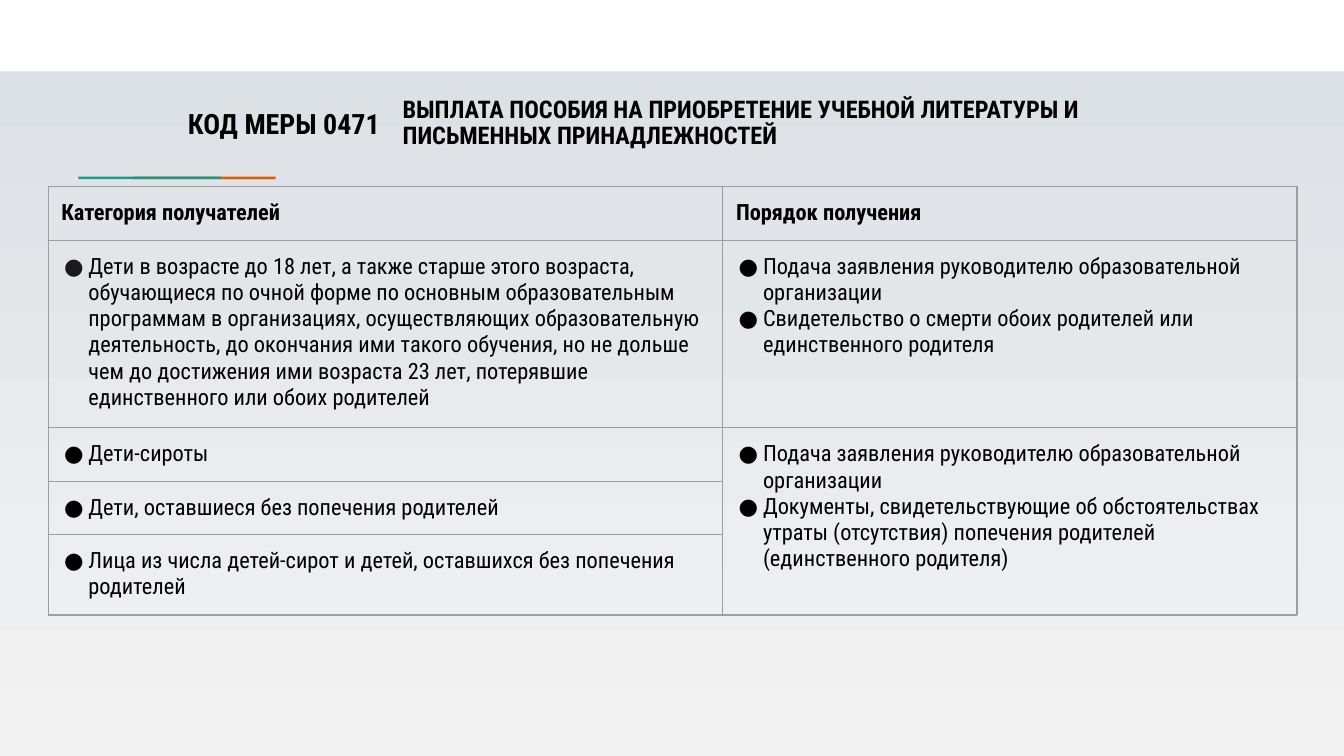
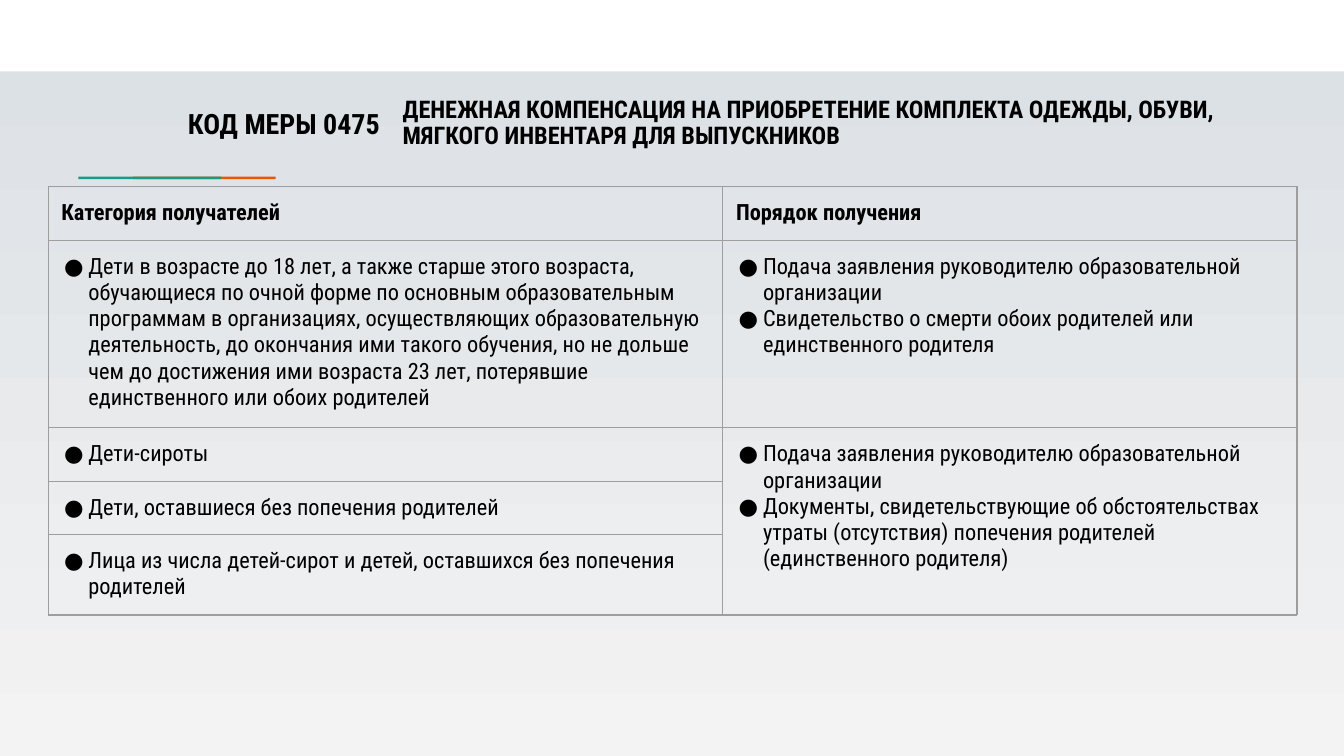
from lxml.etree import SubElement
from pptx import Presentation
from pptx.dml.color import RGBColor
from pptx.enum.shapes import MSO_SHAPE as Shape
from pptx.enum.text import MSO_ANCHOR as Anchor, PP_ALIGN as Align
from pptx.oxml import parse_xml
from pptx.oxml.ns import nsdecls, qn
from pptx.util import Cm, Pt

FONT = "Roboto Condensed"
BLACK = RGBColor(0x00, 0x00, 0x00)
CHARCOAL = RGBColor(0x1A, 0x1A, 0x1A)
WHITE = RGBColor(0xFF, 0xFF, 0xFF)
ORANGE = RGBColor(0xEB, 0x56, 0x00)
TEAL = RGBColor(0x1A, 0x99, 0x88)
GRID = RGBColor(0x9E, 0x9E, 0x9E)
SKY = (RGBColor(0xDA, 0xDF, 0xE4), RGBColor(0xF3, 0xF3, 0xF3))

MEASURES = [
    ("КОД МЕРЫ 0471",
     "ВЫПЛАТА ПОСОБИЯ НА ПРИОБРЕТЕНИЕ УЧЕБНОЙ ЛИТЕРАТУРЫ И ПИСЬМЕННЫХ ПРИНАДЛЕЖНОСТЕЙ",
     CHARCOAL),
    ("КОД МЕРЫ 0475",
     "ДЕНЕЖНАЯ КОМПЕНСАЦИЯ НА ПРИОБРЕТЕНИЕ КОМПЛЕКТА ОДЕЖДЫ, ОБУВИ, МЯГКОГО ИНВЕНТАРЯ ДЛЯ ВЫПУСКНИКОВ",
     BLACK),
]
HEADINGS = ("Категория получателей", "Порядок получения")
RECIPIENTS = [
    "Дети в возрасте до 18 лет, а также старше этого возраста, обучающиеся по очной форме "
    "по основным образовательным программам в организациях, осуществляющих образовательную "
    "деятельность, до окончания ими такого обучения, но не дольше чем до достижения ими "
    "возраста 23 лет, потерявшие единственного или обоих родителей",
    "Дети-сироты",
    "Дети, оставшиеся без попечения родителей",
    "Лица из числа детей-сирот и детей, оставшихся без попечения родителей",
]
APPLICATION = "Подача заявления руководителю образовательной организации"
PROCEDURES = {
    1: (APPLICATION, "Свидетельство о смерти обоих родителей или единственного родителя"),
    2: (APPLICATION, "Документы, свидетельствующие об обстоятельствах утраты (отсутствия) "
                     "попечения родителей (единственного родителя)"),
}

PAGE_WIDTH, PAGE_HEIGHT = 25.4, 14.29
BAND_HEIGHT, HEADER_HEIGHT = 1.35, 1.96
CODE_LEFT, CODE_WIDTH, TITLE_WIDTH = 2.08, 5.35, 16.0
ACCENT_LEFT, ACCENT_TOP, ACCENT_WIDTH, ACCENT_HEIGHT, ACCENT_STEP = 1.48, 3.34, 2.7, 0.05, 1.03
TABLE_LEFT, TABLE_TOP = 0.91, 3.53
COLUMNS = (12.75, 10.85)
ROWS = (1.0, 3.49, 1.0, 1.0, 1.49)
PADDING = 0.25


def write(paragraph, text, size, bold=False):
    run = paragraph.add_run()
    run.text = text
    run.font.name, run.font.size, run.font.bold = FONT, Pt(size), bold
    run.font.color.rgb = BLACK


def pad(part, across, down):
    part.margin_left = part.margin_right = Cm(across)
    part.margin_top = part.margin_bottom = Cm(down)


def add_bar(slide, left, top, width, height, color):
    bar = slide.shapes.add_shape(Shape.RECTANGLE, Cm(left), Cm(top), Cm(width), Cm(height))
    bar.shadow.inherit = False
    bar.fill.solid()
    bar.fill.fore_color.rgb = color
    bar.line.fill.background()


def add_header(slide, code, title):
    add_bar(slide, 0, 0, PAGE_WIDTH, BAND_HEIGHT, WHITE)
    add_bar(slide, ACCENT_LEFT + ACCENT_STEP, ACCENT_TOP, ACCENT_WIDTH, ACCENT_HEIGHT, ORANGE)
    add_bar(slide, ACCENT_LEFT, ACCENT_TOP, ACCENT_WIDTH, ACCENT_HEIGHT, TEAL)

    heading = slide.shapes.title
    heading.left, heading.top = Cm(CODE_LEFT + CODE_WIDTH), Cm(BAND_HEIGHT)
    heading.width, heading.height = Cm(TITLE_WIDTH), Cm(HEADER_HEIGHT)
    label = slide.shapes.add_textbox(Cm(CODE_LEFT), Cm(BAND_HEIGHT), Cm(CODE_WIDTH), Cm(HEADER_HEIGHT))
    pad(heading.text_frame, 0.18, 0.1)
    pad(label.text_frame, PADDING, PADDING)
    for part, text, size, align in ((heading, title, 13, Align.LEFT), (label, code, 15, Align.RIGHT)):
        frame = part.text_frame
        frame.word_wrap = True
        frame.vertical_anchor = Anchor.MIDDLE
        frame.paragraphs[0].alignment = align
        write(frame.paragraphs[0], text, size, True)
    heading.text_frame.paragraphs[0].line_spacing = 0.9


def style_cell(cell):
    pad(cell, PADDING, PADDING)
    cell.fill.background()
    properties = cell._tc.get_or_add_tcPr()
    for position, side in enumerate("LRTB"):
        properties.insert(position, parse_xml(
            f'<a:ln{side} {nsdecls("a")} w="{Pt(0.75)}"><a:solidFill>'
            f'<a:srgbClr val="{GRID}"/></a:solidFill></a:ln{side}>'))


def write_bullets(cell, items, color=BLACK):
    frame = cell.text_frame
    for index, item in enumerate(items):
        paragraph = frame.add_paragraph() if index else frame.paragraphs[0]
        properties = paragraph._p.get_or_add_pPr()
        properties.set("marL", str(Cm(0.51)))
        properties.set("indent", str(Cm(-0.46)))
        SubElement(SubElement(properties, qn("a:buClr")), qn("a:srgbClr"), val=str(color))
        SubElement(properties, qn("a:buFont"), typeface=FONT)
        SubElement(properties, qn("a:buChar"), char="●")
        write(paragraph, item, 12)


def add_recipients_table(slide, first_bullet):
    table = slide.shapes.add_table(len(ROWS), len(COLUMNS), Cm(TABLE_LEFT), Cm(TABLE_TOP),
                                   Cm(sum(COLUMNS)), Cm(sum(ROWS))).table
    table.horz_banding = False
    for column, width in zip(table.columns, COLUMNS):
        column.width = Cm(width)
    for row, height in zip(table.rows, ROWS):
        row.height = Cm(height)
    for cell in table.iter_cells():
        style_cell(cell)
    table.cell(2, 1).merge(table.cell(len(ROWS) - 1, 1))

    for column, heading in enumerate(HEADINGS):
        write(table.cell(0, column).text_frame.paragraphs[0], heading, 12, True)
    for row, recipient in enumerate(RECIPIENTS, 1):
        write_bullets(table.cell(row, 0), [recipient], first_bullet if row == 1 else BLACK)
    for row, steps in PROCEDURES.items():
        write_bullets(table.cell(row, 1), steps)


def main():
    """Build one slide per support measure."""
    deck = Presentation()
    deck.slide_width, deck.slide_height = Cm(PAGE_WIDTH), Cm(PAGE_HEIGHT)
    backdrop = deck.slide_master.background.fill
    backdrop.gradient()
    backdrop.gradient_angle = 270
    for stop, color in zip(backdrop.gradient_stops, SKY):
        stop.color.rgb = color
    for code, title, first_bullet in MEASURES:
        slide = deck.slides.add_slide(deck.slide_layouts[5])
        add_header(slide, code, title)
        add_recipients_table(slide, first_bullet)
    deck.save("out.pptx")


if __name__ == "__main__":
    main()
